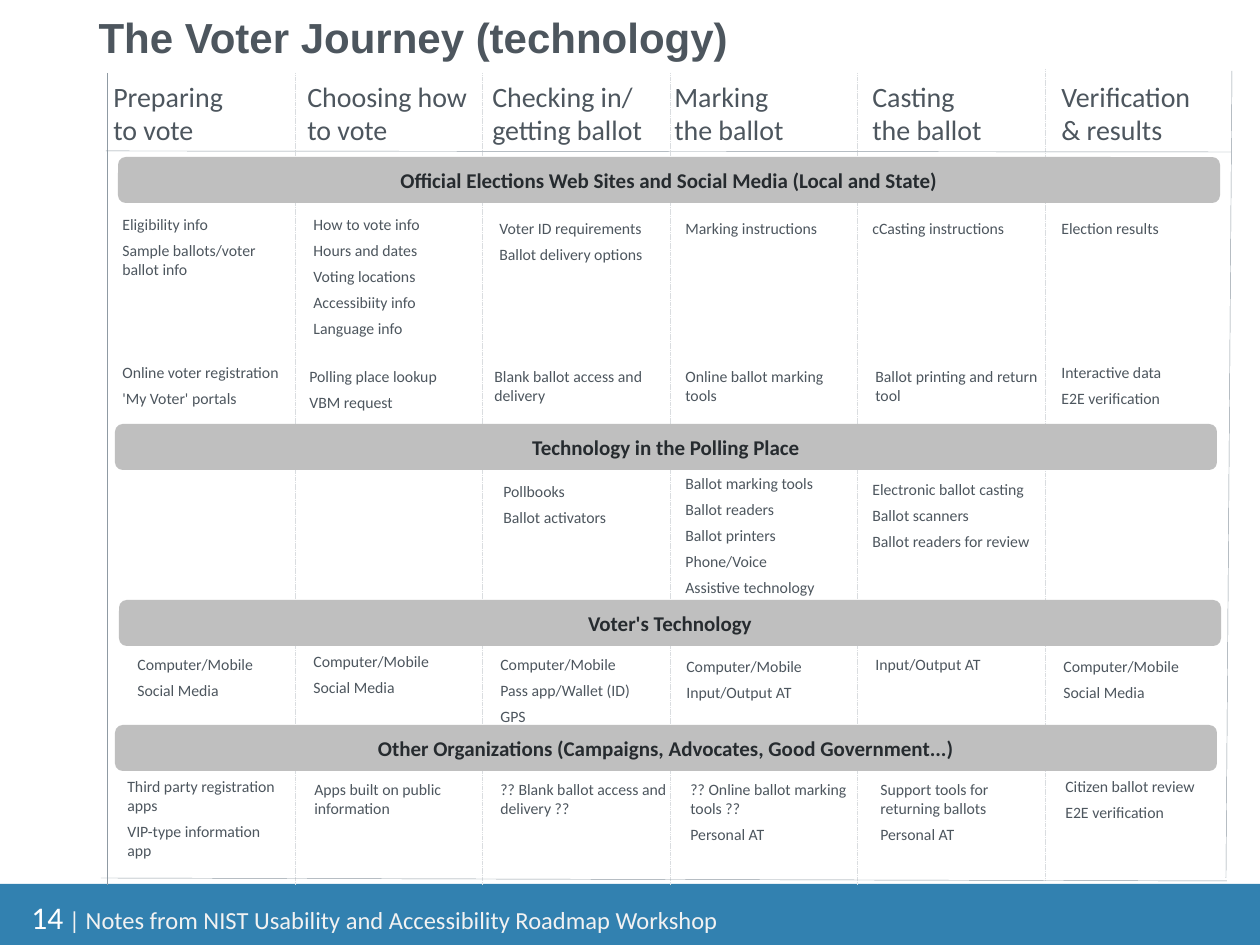
from dataclasses import dataclass

import pptx
import pptx.dml.color
import pptx.enum.dml
import pptx.enum.shapes
import pptx.enum.text
import pptx.oxml
import pptx.util
from lxml import etree

PX_PER_INCH = 126
COLORS = {
    "text": "4D565E", "bar_text": "262B2F", "bar": "BFBFBF", "white": "FFFFFF",
    "footer": "3281B0", "footer_text": "F2F2F2", "dash": "DADDE0", "rule": "8F9AA3",
}
TITLE_FONT = dict(name="Arial", size=24, color="text", bold=True)
HEAD_FONT = dict(name="Calibri", size=16, color="text")
ITEM_FONT = dict(name="Calibri", size=9, color="text")
BAR_FONT = dict(name="Calibri", size=12, color="bar_text", bold=True)
NUMBER_FONT = dict(name="Calibri", size=18, color="white")
FOOTER_FONT = dict(name="Calibri", size=14, color="footer_text")
AUTO = pptx.enum.text.MSO_AUTO_SIZE
ANCHOR = pptx.enum.text.MSO_ANCHOR
ALIGN = pptx.enum.text.PP_ALIGN
SHAPE = pptx.enum.shapes.MSO_SHAPE


@dataclass
class Cell:
    x: int
    y: int
    lines: list[str]
    w: int = 191
    h: int = 77


@dataclass
class Band:
    x: int
    y: int
    label: str
    cells: list[Cell]


@dataclass
class Rule:
    x1: int
    y1: int
    x2: int
    y2: int
    color: str = "rule"
    dashed: bool = False


HEADINGS = [
    Cell(101, 73, ["Preparing\vto vote"], 214, 81),
    Cell(295, 73, ["Choosing how to vote"], 214, 81),
    Cell(480, 73, ["Checking in/", "getting ballot"], 214, 81),
    Cell(662, 73, ["Marking\vthe ballot"], 166, 81),
    Cell(860, 73, ["Casting\vthe ballot"], 214, 81),
    Cell(1049, 73, ["Verification\v& results"], 214, 81),
]

BANDS = [
    Band(118, 157, "Official Elections Web Sites and Social Media (Local and State)", [
        Cell(110, 209, ["Eligibility info", "Sample ballots/voter ballot info"], h=130),
        Cell(301, 209, ["How to vote info", "Hours and dates", "Voting locations",
                        "Accessibiity info", "Language info"], 181, 163),
        Cell(487, 213, ["Voter ID requirements", "Ballot delivery options"], 179, 136),
        Cell(673, 213, ["Marking instructions"], 179, 111),
        Cell(860, 213, ["cCasting instructions"], 179, 111),
        Cell(1049, 213, ["Election results"], 179, 111),
        Cell(110, 357, ["Online voter registration", "'My Voter' portals"], h=111),
        Cell(297, 361, ["Polling place lookup", "VBM request"], h=111),
        Cell(482, 361, ["Blank ballot access and delivery"]),
        Cell(673, 361, ["Online ballot marking tools"]),
        Cell(863, 361, ["Ballot printing and return tool"]),
        Cell(1049, 357, ["Interactive data", "E2E verification"], h=58),
    ]),
    Band(115, 424, "Technology in the Polling Place", [
        Cell(491, 476, ["Pollbooks", "Ballot activators"], h=84),
        Cell(673, 468, ["Ballot marking tools", "Ballot readers", "Ballot printers",
                        "Phone/Voice", "Assistive technology"], h=163),
        Cell(860, 474, ["Electronic ballot casting", "Ballot scanners",
                        "Ballot readers for review"], h=111),
    ]),
    Band(119, 600, "Voter's Technology", [
        Cell(125, 649, ["Computer/Mobile", "Social Media"], h=84),
        Cell(301, 646, ["Computer/Mobile", "Social Media"], h=84),
        Cell(488, 649, ["Computer/Mobile", "Pass app/Wallet (ID)", "GPS"], 178, 84),
        Cell(674, 651, ["Computer/Mobile", "Input/Output AT"], 178, 58),
        Cell(863, 649, ["Input/Output AT"], 178, 32),
        Cell(1051, 651, ["Computer/Mobile", "Social Media"], h=84),
    ]),
    Band(115, 725, "Other Organizations (Campaigns, Advocates, Good Government...)", [
        Cell(115, 771, ["Third party registration apps", "VIP-type information app"], 179, 96),
        Cell(302, 774, ["Apps built on public information"], h=103),
        Cell(488, 774, ["?? Blank ballot access and delivery ??"]),
        Cell(678, 774, ["?? Online ballot marking tools ??", "Personal AT"], h=103),
        Cell(868, 774, ["Support tools for returning ballots", "Personal AT"], h=103),
        Cell(1053, 771, ["Citizen ballot review", "E2E verification"], h=58),
    ]),
]

# Column dividers, then the frame
RULES = [Rule(x, 73, x, 885, "dash", True) for x in (round(295 + 187.4 * i) for i in range(4))]
RULES += [
    Rule(1045, 69, 1045, 881, "dash", True),
    Rule(1232, 71, 1226, 878),
    Rule(107, 73, 107, 885),
    Rule(101, 878, 1227, 881),
    Rule(106, 151, 1231, 152),
]


def px(n: int) -> pptx.util.Emu:
    return pptx.util.Emu(round(n * 914400 / PX_PER_INCH))


def rgb(key: str) -> pptx.dml.color.RGBColor:
    return pptx.dml.color.RGBColor.from_string(COLORS[key])


def set_font(font, fmt: dict) -> None:
    for key, value in fmt.items():
        if key == "color":
            font.color.rgb = rgb(value)
        else:
            setattr(font, key, pptx.util.Pt(value) if key == "size" else value)


def add_box(shapes, kind, x: int, y: int, w: int, h: int, fill: str):
    sp = shapes.add_shape(kind, px(x), px(y), px(w), px(h))
    sp.shadow.inherit = False
    sp.fill.solid()
    sp.fill.fore_color.rgb = rgb(fill)
    sp.line.fill.background()
    return sp


def add_rule(shapes, rule: Rule) -> None:
    s = shapes.add_connector(pptx.enum.shapes.MSO_CONNECTOR.STRAIGHT,
                             px(rule.x1), px(rule.y1), px(rule.x2), px(rule.y2))
    s.line.color.rgb = rgb(rule.color)
    s.line.width = pptx.util.Pt(0.25)
    if rule.dashed:
        s.line.dash_style = pptx.enum.dml.MSO_LINE.SQUARE_DOT
    etree.SubElement(s._element.spPr, pptx.oxml.ns.qn("a:effectLst"))


def add_text(shapes, cell: Cell, fmt: dict, space_after: int = 0):
    sp = shapes.add_textbox(px(cell.x), px(cell.y), px(cell.w), px(cell.h))
    tf = sp.text_frame
    tf.word_wrap = True
    tf.auto_size = AUTO.SHAPE_TO_FIT_TEXT
    tf.text = "\n".join(cell.lines)
    for p in tf.paragraphs:
        p.space_after = pptx.util.Pt(space_after)
        for r in p.runs:
            set_font(r.font, fmt)
    return sp


def add_bar(shapes, band: Band) -> None:
    sp = add_box(shapes, SHAPE.ROUNDED_RECTANGLE, band.x, band.y, 1102, 46, "bar")
    tf = sp.text_frame
    tf.vertical_anchor = ANCHOR.MIDDLE
    tf.text = band.label
    p = tf.paragraphs[0]
    p.alignment = ALIGN.CENTER
    set_font(p.runs[0].font, BAR_FONT)


def main() -> None:
    prs = pptx.Presentation()
    prs.slide_width, prs.slide_height = px(1260), px(945)
    slide = prs.slides.add_slide(prs.slide_layouts[5])
    shapes = slide.shapes

    # Title
    s = shapes.title
    s.left, s.top, s.width, s.height = px(86), px(4), px(1134), px(64)
    tf = s.text_frame
    tf.vertical_anchor = ANCHOR.BOTTOM
    tf.text = "The Voter Journey (technology)"
    p = tf.paragraphs[0]
    p.alignment = ALIGN.LEFT
    set_font(p.runs[0].font, TITLE_FONT)

    # Footer
    add_box(shapes, SHAPE.RECTANGLE, 0, 884, 1260, 61, "footer")
    sp = add_text(shapes, Cell(19, 892, ["14"], 820, 50), NUMBER_FONT)
    r = sp.text_frame.paragraphs[0].add_run()
    r.text = " | Notes from NIST Usability and Accessibility Roadmap Workshop"
    set_font(r.font, FOOTER_FONT)

    # Grid
    grid = shapes.add_group_shape()
    add_box(grid.shapes, SHAPE.RECTANGLE, 107, 71, 1126, 81, "white")
    for rule in RULES:
        add_rule(grid.shapes, rule)

    # Bands, items and column headings
    for band in BANDS:
        add_bar(shapes, band)
    for band in BANDS:
        for cell in band.cells:
            add_text(shapes, cell, ITEM_FONT, space_after=4)
    for cell in HEADINGS:
        add_text(shapes, cell, HEAD_FONT)

    prs.save("out.pptx")


if __name__ == "__main__":
    main()
